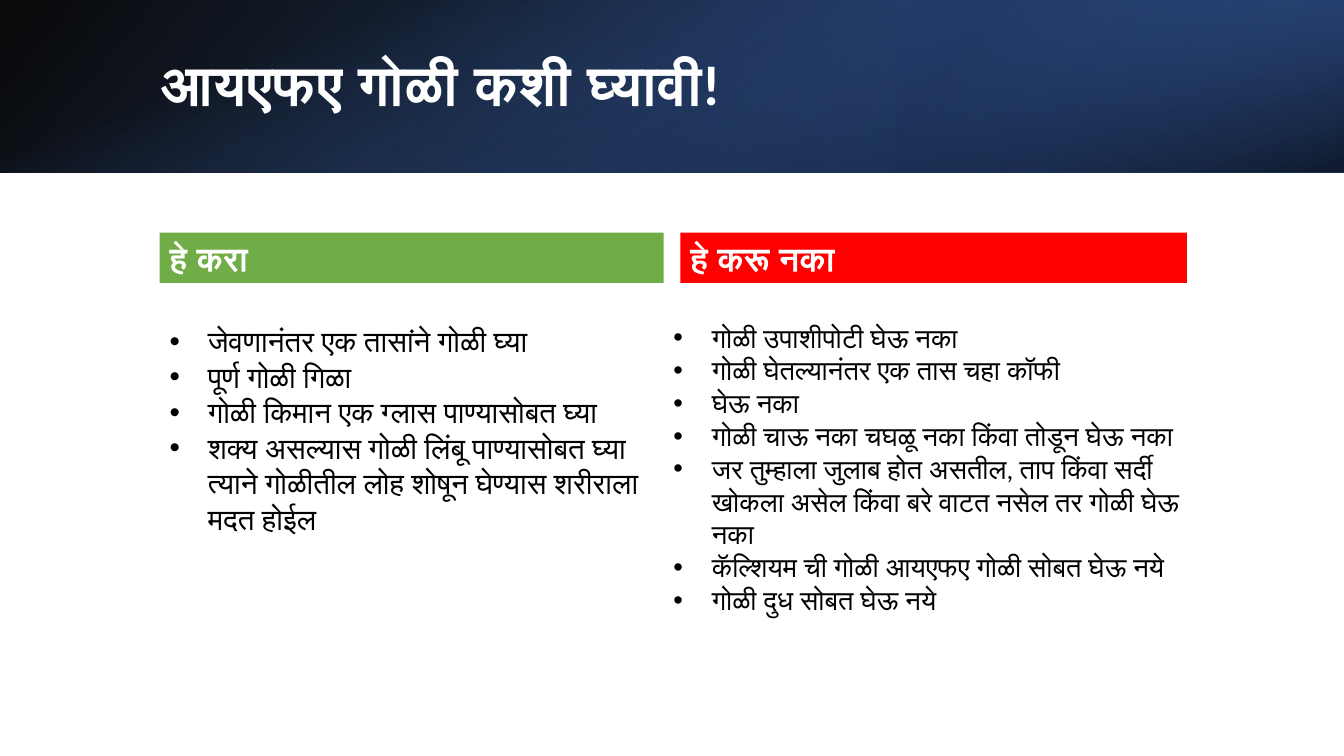
from lxml import etree
from pptx import Presentation, util as u
from pptx.dml.color import RGBColor
from pptx.enum import shapes, text
from pptx.oxml import parse_xml
from pptx.oxml.ns import nsdecls, qn

COLUMNS, ROWS = 160, 90
DO_ITEMS = [
    "जेवणानंतर एक तासांने गोळी घ्या",
    "पूर्ण गोळी गिळा",
    "गोळी किमान एक ग्लास पाण्यासोबत घ्या",
    "शक्य असल्यास गोळी लिंबू पाण्यासोबत घ्या त्याने गोळीतील लोह शोषून घेण्यास शरीराला मदत होईल",
]
DONT_ITEMS = [
    "गोळी उपाशीपोटी घेऊ नका",
    "गोळी घेतल्यानंतर एक तास चहा कॉफी",
    "घेऊ नका",
    "गोळी चाऊ नका चघळू नका किंवा तोडून घेऊ नका",
    "जर तुम्हाला जुलाब होत असतील, ताप किंवा सर्दी खोकला असेल किंवा बरे वाटत नसेल तर गोळी घेऊ नका",
    "कॅल्शियम ची गोळी आयएफए गोळी सोबत घेऊ नये",
    "गोळी दुध सोबत घेऊ नये",
]


def color(hex_code):
    return RGBColor.from_string(hex_code)


class Slide:
    font = "Calibri"
    white, black = "FFFFFF", "000000"
    hanging = u.Inches(0.38)

    def __init__(self, deck):
        self.shapes = deck.slides.add_slide(deck.slide_layouts[6]).shapes
        self.column = deck.slide_width / COLUMNS
        self.row = deck.slide_height / ROWS

    def place(self, left, top, width, height):
        """Turn grid columns and rows into slide lengths."""
        return (round(left * self.column), round(top * self.row),
                round(width * self.column), round(height * self.row))

    def rectangle(self, *cells):
        panel = self.shapes.add_shape(shapes.MSO_SHAPE.RECTANGLE, *self.place(*cells))
        panel.shadow.inherit = False
        panel.line.fill.background()
        return panel

    def gradient(self, cells, stops, angle, rotation=0, flipped=False):
        """Draw a panel whose stops are (position, colour, opacity) in percent."""
        panel = self.rectangle(*cells)
        panel.rotation = rotation
        properties = panel._element.spPr
        if flipped:
            properties.find(qn("a:xfrm")).set("flipH", "1")
        fill = parse_xml(f'<a:gradFill {nsdecls("a")} rotWithShape="1"><a:gsLst/></a:gradFill>')
        for position, hex_code, opacity in stops:
            stop = etree.SubElement(fill[0], qn("a:gs"), pos=str(position * 1000))
            shade = etree.SubElement(stop, qn("a:srgbClr"), val=hex_code)
            etree.SubElement(shade, qn("a:alpha"), val=str(opacity * 1000))
        etree.SubElement(fill, qn("a:lin"), ang=str(angle * 60000), scaled="0")
        properties.find(qn("a:prstGeom")).addnext(fill)

    def set_text(self, frame, words, size, hex_code, bold=False):
        frame.word_wrap = True
        frame.text = words
        for paragraph in frame.paragraphs:
            paragraph.alignment = text.PP_ALIGN.LEFT
            for run in paragraph.runs:
                run.font.name, run.font.size = self.font, u.Pt(size)
                run.font.bold = bold
                run.font.color.rgb = color(hex_code)

    def title(self, cells, words):
        frame = self.shapes.add_textbox(*self.place(*cells)).text_frame
        self.set_text(frame, words, 40, self.white, bold=True)
        frame.vertical_anchor = text.MSO_ANCHOR.MIDDLE
        frame.paragraphs[0].line_spacing = 0.9

    def heading(self, cells, words, hex_code):
        bar = self.rectangle(*cells)
        bar.fill.solid()
        bar.fill.fore_color.rgb = color(hex_code)
        self.set_text(bar.text_frame, words, 24, self.white, bold=True)
        bar.text_frame.vertical_anchor = text.MSO_ANCHOR.TOP

    def bullets(self, cells, items, size, inset):
        """Add a bulleted list that starts inset rows below the box top."""
        frame = self.shapes.add_textbox(*self.place(*cells)).text_frame
        self.set_text(frame, "\n".join(items), size, self.black)
        frame.margin_top = round(inset * self.row)
        for paragraph in frame.paragraphs:
            layout = paragraph._p.get_or_add_pPr()
            layout.set("marL", str(self.hanging))
            layout.set("indent", str(-self.hanging))
            etree.SubElement(layout, qn("a:buFont"), typeface="Arial")
            etree.SubElement(layout, qn("a:buChar"), char="•")


def main():
    deck = Presentation()
    deck.slide_width, deck.slide_height = u.Inches(13.33), u.Inches(7.5)
    slide = Slide(deck)

    banner = 20.6
    glow = COLUMNS / 3
    offset = (COLUMNS - banner) / 2
    slide.gradient((0, 0, COLUMNS, banner),
                   [(0, "000000", 96), (100, "2F5597", 100)], 140, flipped=True)
    slide.gradient((COLUMNS - glow, 0, glow, banner),
                   [(19, "203864", 68), (100, "4472C4", 79)], 320, rotation=180, flipped=True)
    slide.gradient((offset, -offset, banner, COLUMNS),
                   [(23, "4472C4", 0), (99, "000000", 74)], 340, rotation=90)
    slide.title((18, 4.6, 131.8, 11.5), "आयएफए गोळी कशी घ्यावी!")

    heading_top, heading_height = 27.7, 6
    list_top = heading_top + heading_height
    slide.heading((19, heading_top, 60, heading_height), "हे करा", "70AD47")
    slide.bullets((19, list_top, 60, 42.8), DO_ITEMS, 21.1, 4.8)
    slide.heading((81, heading_top, 60.3, heading_height), "हे करू नका", "FF0000")
    slide.bullets((79, list_top, 66.8, 49), DONT_ITEMS, 19.5, 4.5)

    deck.save("out.pptx")


if __name__ == "__main__":
    main()
